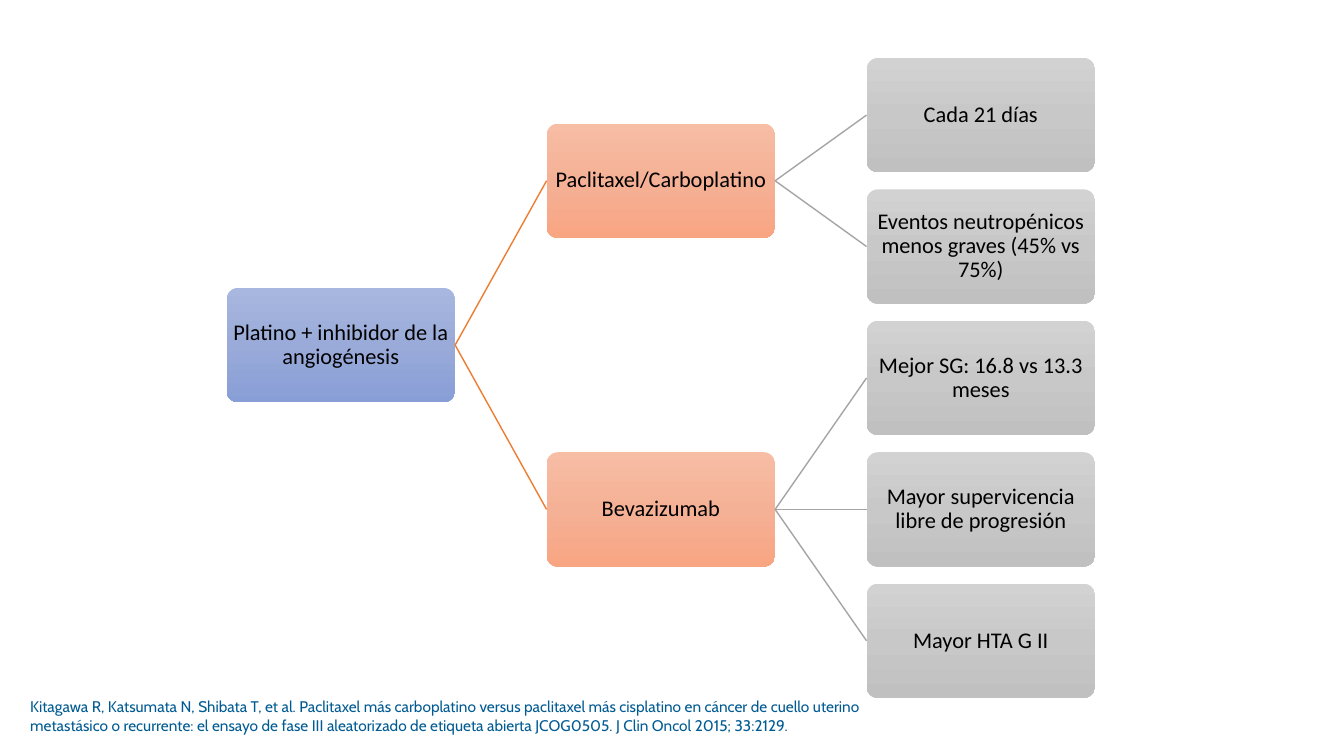
from copy import deepcopy

from pptx import Presentation
from pptx.dml.color import RGBColor
from pptx.enum.shapes import MSO_CONNECTOR as CONN, MSO_SHAPE as SHAPE
from pptx.enum.text import MSO_ANCHOR as ANCHOR, PP_ALIGN as ALIGN
from pptx.oxml.ns import qn
from pptx.oxml.xmlchemy import OxmlElement
from pptx.util import Cm, Pt

BOX_W, BOX_H = 5.76, 2.88
LEFT, TOP = 5.71, 1.46
COL_STEP, ROW_STEP = 1.4 * BOX_W, 1.15 * BOX_H

LEVEL_FILLS = [
    ("A8B7DF", "9AABD9", "889ED7"),
    ("F7BDA5", "F5B196", "F8A582"),
    ("D2D2D2", "C8C8C8", "C0C0C0"),
]
LEVEL_LINES = [None, "ED7D31", "A5A5A5"]

TREE = ("Platino + inhibidor de la angiogénesis", [
    ("Paclitaxel/Carboplatino", [
        ("Cada 21 días", []),
        ("Eventos neutropénicos menos graves (45% vs 75%)", []),
    ]),
    ("Bevazizumab", [
        ("Mejor SG: 16.8 vs 13.3 meses", []),
        ("Mayor supervicencia libre de progresión", []),
        ("Mayor HTA G II", []),
    ]),
])

CITATION = (
    "Kitagawa R, Katsumata N, Shibata T, et al. Paclitaxel más carboplatino "
    "versus paclitaxel más cisplatino en cáncer de cuello uterino metastásico "
    "o recurrente: el ensayo de fase III aleatorizado de etiqueta abierta "
    "JCOG0505. J Clin Oncol 2015; 33:2129."
)


def rgb(value):
    """Turn a hex string into a colour."""
    return RGBColor.from_string(value)


def apply(obj, values):
    """Set each attribute named in a dict."""
    for name, value in values.items():
        setattr(obj, name, value)


class TreeSlide:
    """Draw the treatment tree on one slide in one style."""

    box_frame = dict(word_wrap=True, vertical_anchor=ANCHOR.MIDDLE,
                     margin_left=Cm(0.03), margin_right=Cm(0.03),
                     margin_top=Cm(0.03), margin_bottom=Cm(0.03))
    box_para = dict(alignment=ALIGN.CENTER, line_spacing=0.9)
    box_font = dict(name="Calibri", size=Pt(16))
    note_font = dict(name="Cabin", size=Pt(11))

    def __init__(self, prs):
        """Add a blank slide."""
        self.s = prs.slides.add_slide(prs.slide_layouts[6])
        self.next_row = 0

    def set_text(self, tf, text, frame, para, font, colour):
        """Fill a text frame with one formatted paragraph."""
        apply(tf, frame)
        p = tf.paragraphs[0]
        apply(p, para)
        r = p.add_run()
        r.text = text
        apply(r.font, font)
        r.font.color.rgb = rgb(colour)

    def box(self, text, level, row):
        """Add a rounded box with a vertical gradient."""
        sp = self.s.shapes.add_shape(
            SHAPE.ROUNDED_RECTANGLE, Cm(LEFT + level * COL_STEP),
            Cm(TOP + row * ROW_STEP), Cm(BOX_W), Cm(BOX_H))
        sp.adjustments[0] = 0.1
        sp.shadow.inherit = False
        sp.line.fill.background()
        sp.fill.gradient()
        sp.fill.gradient_angle = 270
        stops = sp._element.spPr.find(qn("a:gradFill")).find(qn("a:gsLst"))
        stops.insert(1, deepcopy(stops[0]))
        for i, stop in enumerate(sp.fill.gradient_stops):
            stop.position = i / 2
            stop.color.rgb = rgb(LEVEL_FILLS[level][i])
        self.set_text(sp.text_frame, text, self.box_frame, self.box_para,
                      self.box_font, "000000")
        return sp

    def link(self, parent, child, colour):
        """Join a parent's right side to a child's left side."""
        cx = self.s.shapes.add_connector(CONN.STRAIGHT, 0, 0, 0, 0)
        cx.begin_connect(parent, 3)
        cx.end_connect(child, 1)
        cx.line.color.rgb = rgb(colour)
        cx.line.width = Pt(1)
        cx._element.spPr.append(OxmlElement("a:effectLst"))

    def branch(self, node, level=0):
        """Draw a node centred on its children; return its box and row."""
        text, children = node
        drawn = [self.branch(child, level + 1) for child in children]
        if drawn:
            row = (drawn[0][1] + drawn[-1][1]) / 2
        else:
            row = self.next_row
            self.next_row += 1
        sp = self.box(text, level, row)
        for child, _ in drawn:
            self.link(sp, child, LEVEL_LINES[level + 1])
        return sp, row

    def note(self, text, x, y, w, h):
        """Add a plain text box."""
        sp = self.s.shapes.add_textbox(Cm(x), Cm(y), Cm(w), Cm(h))
        self.set_text(sp.text_frame, text, dict(word_wrap=True), {},
                      self.note_font, "005B93")


def main():
    """Build and save the presentation."""
    prs = Presentation()
    apply(prs, dict(slide_width=Cm(33.87), slide_height=Cm(19.05)))
    slide = TreeSlide(prs)
    slide.branch(TREE)
    slide.note(CITATION, 0.51, 17.45, 22.45, 1.19)
    prs.save("out.pptx")


if __name__ == "__main__":
    main()
